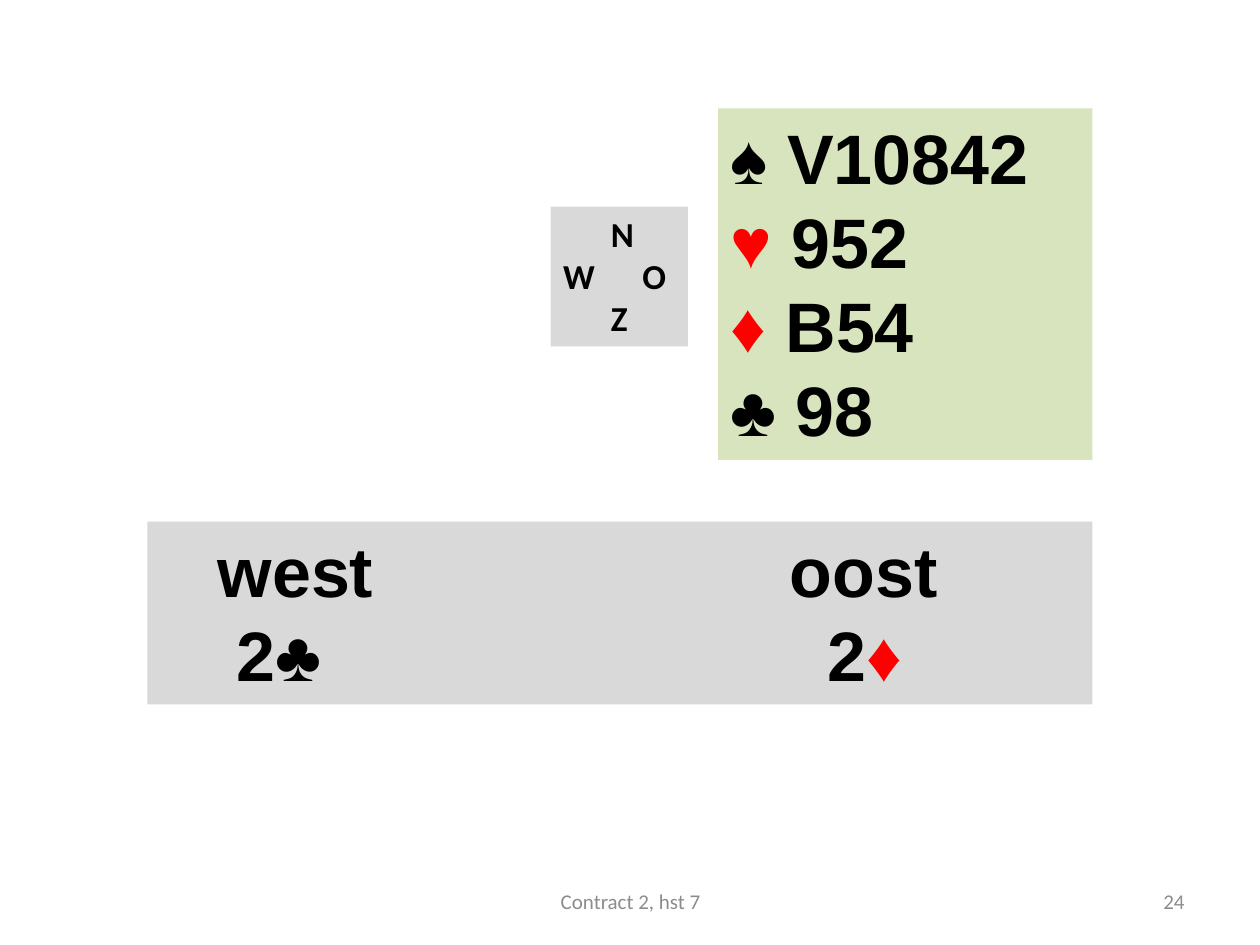
from dataclasses import dataclass
from itertools import groupby

from lxml.etree import SubElement
from pptx import Presentation
from pptx.dml.color import RGBColor
from pptx.enum.shapes import MSO_SHAPE
from pptx.enum.text import MSO_ANCHOR, MSO_AUTO_SIZE, PP_ALIGN
from pptx.oxml.ns import qn
from pptx.util import Inches, Pt

BLACK, RED, FOOTER_GRAY = "000000", "FF0000", "8C8C8C"
HAND_GREEN, PANEL_GRAY = "D7E4BD", "D9D9D9"
RED_SUITS = "♥♦"


@dataclass
class Line:
    text: str
    tab_stops: tuple[float, ...] = ()


@dataclass
class Panel:
    box: tuple[float, float, float, float]
    fill: str
    font: str
    size: int
    lines: list[Line]


@dataclass
class FooterItem:
    box: tuple[float, float, float, float]
    text: str
    align: PP_ALIGN


PANELS = [
    # East's hand
    Panel((5.7, 0.86, 2.97, 2.79), HAND_GREEN, "Arial", 40,
          [Line("♠ V10842"), Line("♥ 952"), Line("♦ B54"), Line("♣ 98")]),
    # Compass
    Panel((4.37, 1.64, 1.09, 1.11), PANEL_GRAY, "Calibri", 20,
          [Line("\tN", (0.38,)), Line("W\tO", (0.63,)), Line("\tZ", (0.38,))]),
    # Bidding
    Panel((1.17, 4.14, 7.5, 1.45), PANEL_GRAY, "Arial", 40,
          [Line("\twest\toost", (0.46, 5.0)), Line("\t2♣\t2♦", (0.61, 5.3))]),
]

FOOTER = [
    FooterItem((3.42, 6.95, 3.17, 0.4), "Contract 2, hst 7", PP_ALIGN.CENTER),
    FooterItem((7.17, 6.95, 2.33, 0.4), "24", PP_ALIGN.RIGHT),
]


def color(value: str) -> RGBColor:
    return RGBColor.from_string(value)


def format_run(run, font: str, size: int, hex_color: str, bold: bool) -> None:
    run.font.name = font
    run.font.size = Pt(size)
    run.font.bold = bold
    run.font.color.rgb = color(hex_color)


def set_tab_stops(paragraph, stops: tuple[float, ...]) -> None:
    tab_list = SubElement(paragraph._p.get_or_add_pPr(), qn("a:tabLst"))
    for stop in stops:
        SubElement(tab_list, qn("a:tab"), pos=str(Inches(stop)), algn="l")


def draw_panel(slide, panel: Panel) -> None:
    rectangle = slide.shapes.add_shape(MSO_SHAPE.RECTANGLE, *map(Inches, panel.box))
    rectangle.shadow.inherit = False
    rectangle.fill.solid()
    rectangle.fill.fore_color.rgb = color(panel.fill)
    rectangle.line.fill.background()
    frame = rectangle.text_frame
    frame.word_wrap = True
    frame.auto_size = MSO_AUTO_SIZE.SHAPE_TO_FIT_TEXT
    frame.vertical_anchor = MSO_ANCHOR.TOP
    frame.text = "\n" * (len(panel.lines) - 1)
    for paragraph, line in zip(frame.paragraphs, panel.lines):
        paragraph.alignment = PP_ALIGN.LEFT
        if line.tab_stops:
            set_tab_stops(paragraph, line.tab_stops)
        # Red suits get runs of their own
        for is_red, part in groupby(line.text, lambda char: char in RED_SUITS):
            run = paragraph.add_run()
            run.text = "".join(part)
            format_run(run, panel.font, panel.size, RED if is_red else BLACK, True)


def draw_footer_item(slide, item: FooterItem) -> None:
    frame = slide.shapes.add_textbox(*map(Inches, item.box)).text_frame
    frame.word_wrap = True
    frame.vertical_anchor = MSO_ANCHOR.MIDDLE
    frame.text = item.text
    paragraph = frame.paragraphs[0]
    paragraph.alignment = item.align
    format_run(paragraph.runs[0], "Calibri", 12, FOOTER_GRAY, False)


def main() -> None:
    presentation = Presentation()
    presentation.slide_width = Inches(10)
    presentation.slide_height = Inches(7.5)
    slide = presentation.slides.add_slide(presentation.slide_layouts[6])
    for panel in PANELS:
        draw_panel(slide, panel)
    for item in FOOTER:
        draw_footer_item(slide, item)
    presentation.save("out.pptx")


if __name__ == "__main__":
    main()
